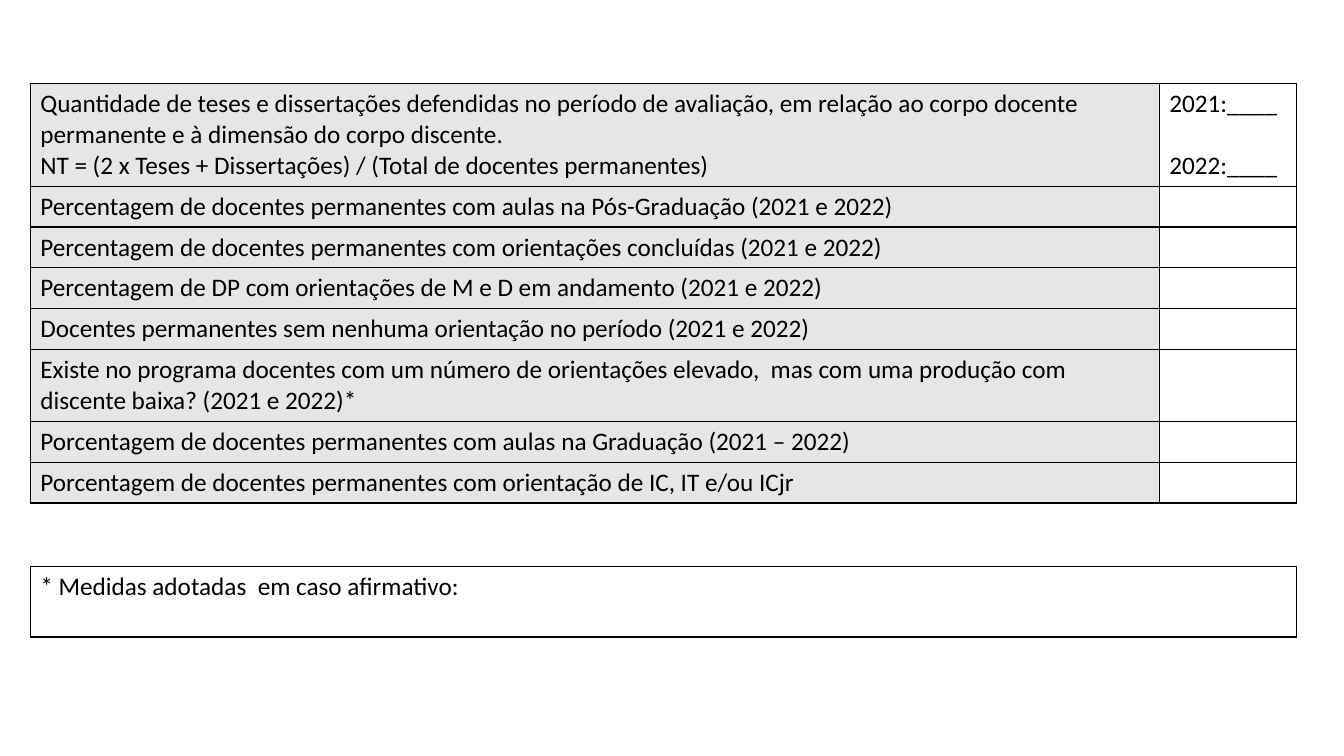
from dataclasses import dataclass

from lxml.etree import SubElement
from pptx import Presentation
from pptx.dml.color import RGBColor as Color
from pptx.oxml.ns import qn
from pptx.util import Inches, Pt


@dataclass(frozen=True)
class Theme:
    font: str = "Calibri"
    size: int = 18
    ink: str = "000000"
    label_fill: str = "E7E6E6"
    border: int = 1


class Sheet:
    line_share = 4
    padding_share = 1.33

    def __init__(self, deck, theme):
        self.deck = deck
        self.theme = theme
        self.page = deck.slides.add_slide(deck.slide_layouts[6])

    def across(self, share):
        return round(self.deck.slide_width * share / 100)

    def down(self, share):
        return round(self.deck.slide_height * share / 100)

    def table(self, left, top, widths, rows, label_fill=None):
        heights = [self.line_share * lines + self.padding_share for lines, _ in rows]
        frame = self.page.shapes.add_table(
            len(rows), len(widths), self.across(left), self.down(top),
            self.across(sum(widths)), self.down(sum(heights)))
        table = frame.table
        table.first_row = table.horz_banding = False
        for column, width in zip(table.columns, widths):
            column.width = self.across(width)
        for row, height, (_, texts) in zip(table.rows, heights, rows):
            row.height = self.down(height)
            for index, (cell, paragraphs) in enumerate(zip(row.cells, texts)):
                self.cell(cell, paragraphs, label_fill if index == 0 else None)

    def cell(self, cell, paragraphs, fill):
        self.borders(cell)
        if fill:
            cell.fill.solid()
            cell.fill.fore_color.rgb = Color.from_string(fill)
        else:
            cell.fill.background()
        frame = cell.text_frame
        frame.paragraphs[0].font.size = Pt(self.theme.size)
        for index, (text, gap) in enumerate(paragraphs):
            para = frame.add_paragraph() if index else frame.paragraphs[0]
            para.space_before = Pt(gap)
            self.span(para, text)

    def span(self, para, text):
        span = para.add_run()
        span.text = text
        span.font.name = self.theme.font
        span.font.size = Pt(self.theme.size)
        span.font.color.rgb = Color.from_string(self.theme.ink)

    def borders(self, cell):
        properties = cell._tc.get_or_add_tcPr()
        for side in ("L", "R", "T", "B"):
            edge = SubElement(properties, qn(f"a:ln{side}"), w=str(Pt(self.theme.border)))
            paint = SubElement(edge, qn("a:solidFill"))
            SubElement(paint, qn("a:srgbClr"), val=self.theme.ink)


def question(text, lines=1):
    return lines, [[(text, 0)], []]


INDICATORS = [
    (3, [
        [("Quantidade de teses e dissertações defendidas no período de avaliação, "
          "em relação ao corpo docente permanente e à dimensão do corpo discente.", 0),
         ("NT = (2 x Teses + Dissertações) / (Total de docentes permanentes)", 0)],
        [("2021:____", 0), ("2022:____", 22)],
    ]),
    question("Percentagem de docentes permanentes com aulas na Pós-Graduação (2021 e 2022)"),
    question("Percentagem de docentes permanentes com orientações concluídas (2021 e 2022)"),
    question("Percentagem de DP com orientações de M e D em andamento (2021 e 2022)"),
    question("Docentes permanentes sem nenhuma orientação no período (2021 e 2022)"),
    question("Existe no programa docentes com um número de orientações elevado,  "
             "mas com uma produção com discente baixa? (2021 e 2022)*", 2),
    question("Porcentagem de docentes permanentes com aulas na Graduação (2021 – 2022)"),
    question("Porcentagem de docentes permanentes com orientação de IC, IT e/ou ICjr"),
]
MEASURES = [(2, [[("* Medidas adotadas  em caso afirmativo:", 0)]])]


def main():
    deck = Presentation()
    deck.slide_width, deck.slide_height = Inches(13.33), Inches(7.5)
    theme = Theme()
    sheet = Sheet(deck, theme)
    left, label_width, answer_width = 2.25, 84, 10.2
    sheet.table(left, 11.07, [label_width, answer_width], INDICATORS, theme.label_fill)
    sheet.table(left, 74.93, [label_width + answer_width], MEASURES)
    deck.save("out.pptx")


if __name__ == "__main__":
    main()
